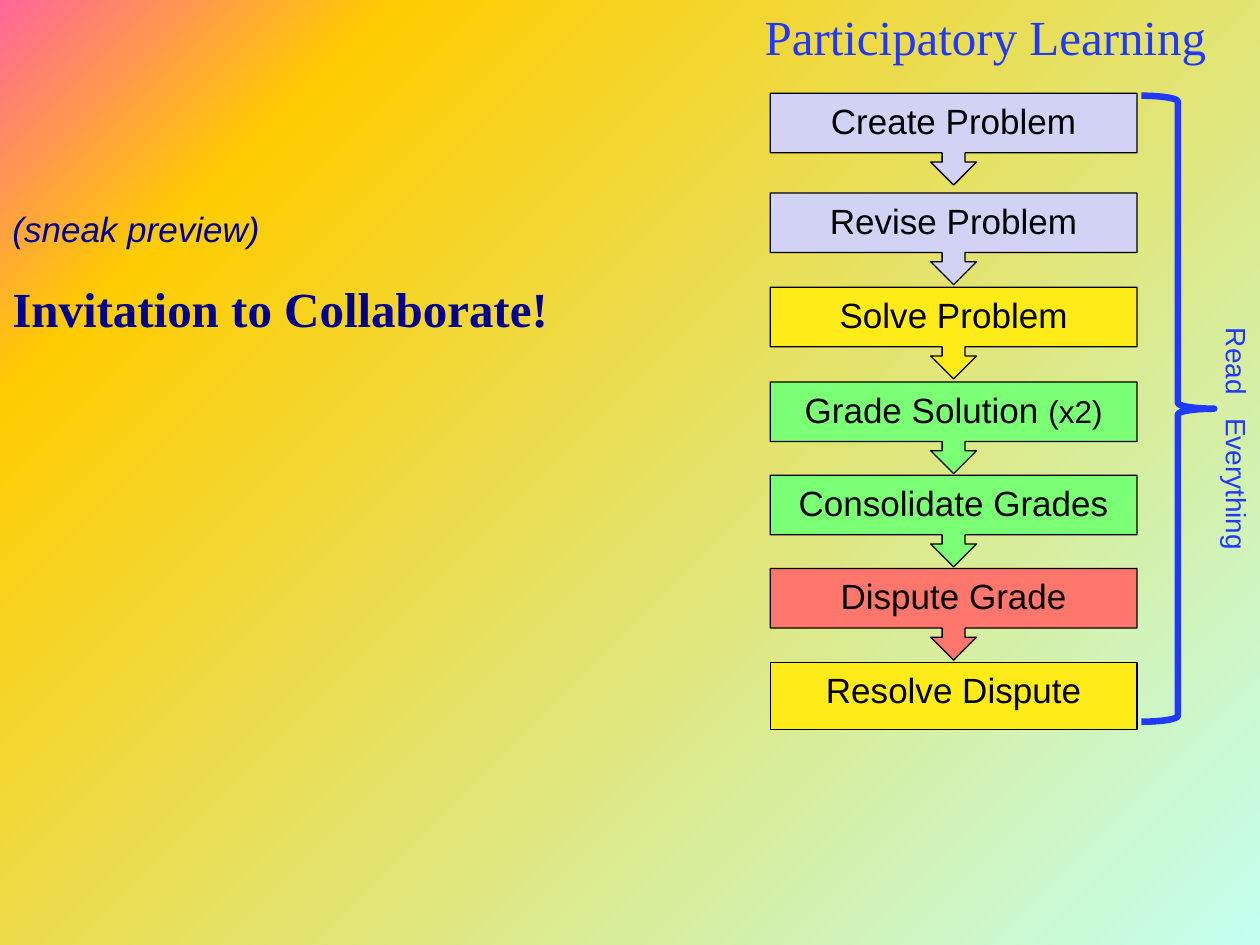
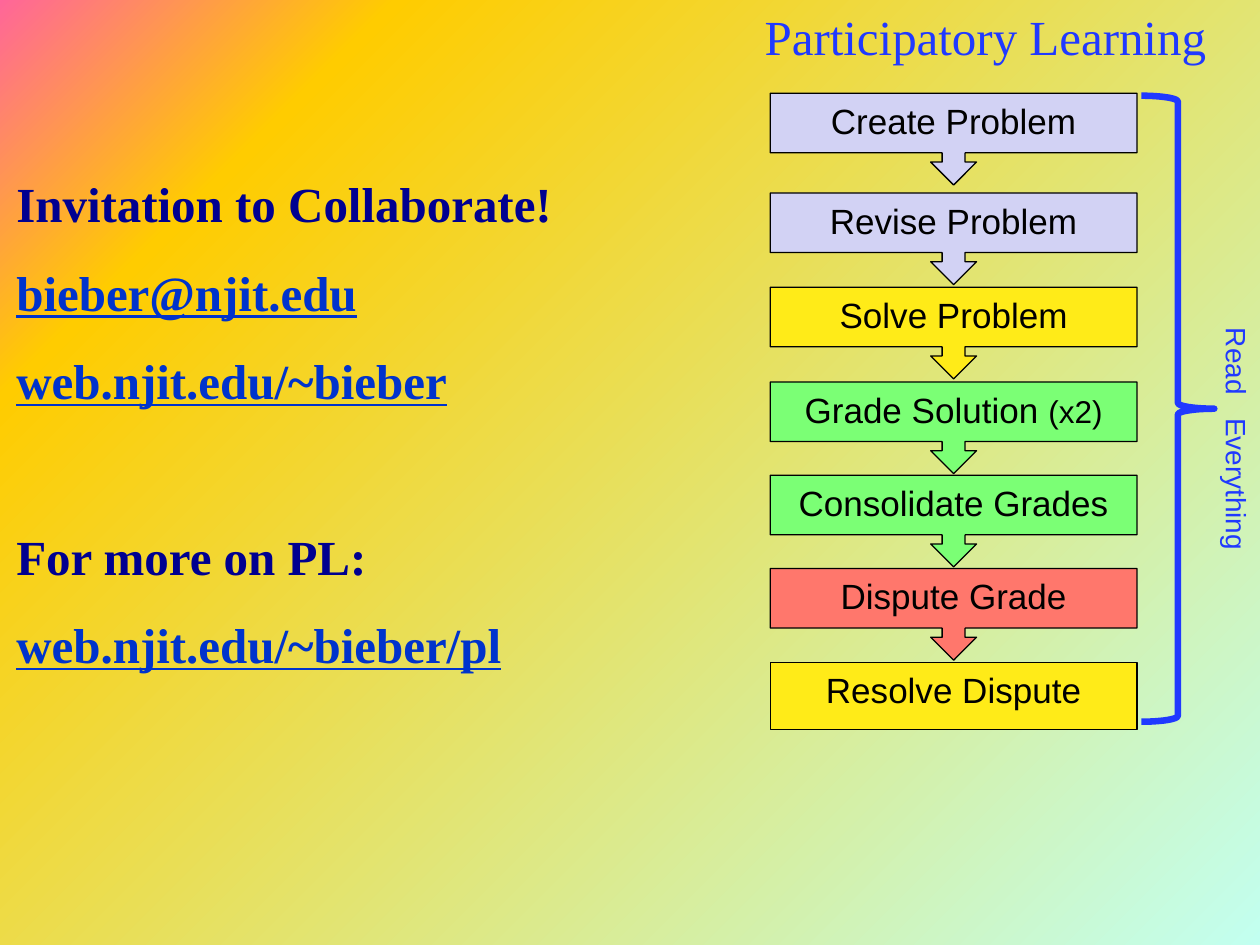
import pptx
import pptx.dml.color
import pptx.enum.shapes
import pptx.enum.text
import pptx.oxml
import pptx.oxml.ns
import pptx.util
from pptx.util import Cm, Pt

RGBColor = pptx.dml.color.RGBColor
MSO_SHAPE = pptx.enum.shapes.MSO_SHAPE
PP_ALIGN = pptx.enum.text.PP_ALIGN
qn = pptx.oxml.ns.qn

BLACK = RGBColor(0x00, 0x00, 0x00)
LAVENDER = RGBColor(0xD2, 0xD2, 0xF4)
YELLOW = RGBColor(0xFF, 0xEB, 0x18)
GREEN = RGBColor(0x7B, 0xFF, 0x75)
RED = RGBColor(0xFF, 0x77, 0x6C)
BLUE = RGBColor(0x20, 0x39, 0xFF)
NAVY = RGBColor(0x00, 0x00, 0x90)
LINK_BLUE = RGBColor(0x00, 0x33, 0xCC)

SANS = "Arial"
SERIF = "Times New Roman"

# Percent position and colour, from the bottom right corner outwards
BACKGROUND_STOPS = [(0, "FF9900"), (0, "C2FFF0"), (82, "FFCC00"), (100, "FF6699")]

# Step label, optional smaller suffix, top in cm, fill
STEPS = [
    ("Create Problem", "", 1.88, LAVENDER),
    ("Revise Problem", "", 3.89, LAVENDER),
    ("Solve Problem", "", 5.79, YELLOW),
    ("Grade Solution ", "(x2)", 7.7, GREEN),
    ("Consolidate Grades", "", 9.58, GREEN),
    ("Dispute Grade", "", 11.46, RED),
    ("Resolve Dispute", "", 13.36, YELLOW),
]


def set_background(master):
    """Give every slide the gradient that spreads from the bottom right corner."""
    master.background.fill.solid()
    solid_fill = master.element.find(".//" + qn("p:bgPr")).find(qn("a:solidFill"))
    stops = "".join(
        f'<a:gs pos="{percent * 1000}"><a:srgbClr val="{color}"/></a:gs>'
        for percent, color in BACKGROUND_STOPS
    )
    gradient = pptx.oxml.parse_xml(
        f'<a:gradFill {pptx.oxml.ns.nsdecls("a")} rotWithShape="0">'
        f"<a:gsLst>{stops}</a:gsLst>"
        '<a:path path="circle"><a:fillToRect l="100000" t="100000"/></a:path>'
        "</a:gradFill>"
    )
    solid_fill.getparent().replace(solid_fill, gradient)


def style_font(font, name, size, color, bold=False, italic=False, underline=False):
    font.name = name
    font.size = Pt(size)
    font.color.rgb = color
    font.bold = bold
    font.italic = italic
    font.underline = underline


def add_text_box(slide, left, top, width, height):
    frame = slide.shapes.add_textbox(Cm(left), Cm(top), Cm(width), Cm(height)).text_frame
    frame.word_wrap = True
    frame.auto_size = pptx.enum.text.MSO_AUTO_SIZE.SHAPE_TO_FIT_TEXT
    return frame


def add_step(slide, label, suffix, top, fill, is_last):
    """Draw a step box; all but the last one point down to the next."""
    kind = MSO_SHAPE.RECTANGLE if is_last else MSO_SHAPE.DOWN_ARROW_CALLOUT
    height = 1.35 if is_last else 1.85
    shape = slide.shapes.add_shape(kind, Cm(15.53), Cm(top), Cm(7.39), Cm(height))
    shape.shadow.inherit = False
    shape.fill.solid()
    shape.fill.fore_color.rgb = fill
    shape.line.color.rgb = BLACK
    shape.line.width = Pt(0.75)
    shape.text_frame.vertical_anchor = pptx.enum.text.MSO_ANCHOR.TOP
    paragraph = shape.text_frame.paragraphs[0]
    paragraph.alignment = PP_ALIGN.CENTER
    style_font(paragraph.add_run().font, SANS, 20, BLACK)
    paragraph.runs[0].text = label
    if suffix:
        run = paragraph.add_run()
        run.text = suffix
        style_font(run.font, SANS, 18, BLACK)


def add_brace(slide):
    brace = slide.shapes.add_shape(
        MSO_SHAPE.RIGHT_BRACE, Cm(23.01), Cm(1.93), Cm(1.47), Cm(12.62)
    )
    brace.shadow.inherit = False
    brace.fill.background()
    brace.line.color.rgb = BLUE
    brace.line.width = Pt(3.75)
    brace.adjustments[0] = 0.08
    brace.adjustments[1] = 0.5


def add_brace_label(slide):
    frame = add_text_box(slide, 24.21, 6.35, 1.19, 5)
    frame._txBody.bodyPr.set("vert", "vert")
    paragraph = frame.paragraphs[0]
    paragraph.alignment = PP_ALIGN.CENTER
    for text in ("Read", " ", "Everything"):
        run = paragraph.add_run()
        run.text = text
        style_font(run.font, SANS, 16, BLUE)
    # Widen the gap between the two words
    paragraph.runs[1].font._element.set("spc", "890")


def add_title(slide):
    paragraph = add_text_box(slide, 14.33, 0, 11.07, 1.45).paragraphs[0]
    paragraph.text = "Participatory Learning"
    paragraph.alignment = PP_ALIGN.CENTER
    style_font(paragraph.font, SERIF, 28, BLUE)


def add_process(slide):
    """Draw the part that both slides share."""
    for number, step in enumerate(STEPS, start=1):
        add_step(slide, *step, is_last=number == len(STEPS))
    add_brace(slide)
    add_brace_label(slide)
    add_title(slide)


def add_message(slide, left, top, height, lines):
    """Write lines given as (text, space before in points, font settings)."""
    frame = add_text_box(slide, left, top, 15.44, height)
    for index, (text, space_before, settings) in enumerate(lines):
        paragraph = frame.add_paragraph() if index else frame.paragraphs[0]
        paragraph.text = text
        paragraph.line_spacing = 1.5
        if space_before:
            paragraph.space_before = Pt(space_before)
        style_font(paragraph.font, **settings)


def main():
    presentation = pptx.Presentation()
    presentation.slide_width = Cm(25.4)
    presentation.slide_height = Cm(19.05)
    set_background(presentation.slide_master)
    blank = presentation.slide_layouts[6]

    preview = dict(name=SANS, size=20, color=NAVY, italic=True)
    heading = dict(name=SERIF, size=28, color=NAVY, bold=True)
    address = dict(heading, color=LINK_BLUE, underline=True)

    # Slide 1: sneak preview
    slide = presentation.slides.add_slide(blank)
    add_process(slide)
    add_message(slide, 0, 3.63, 8.71, [
        ("(sneak preview)", 0, preview),
        ("Invitation to Collaborate!", 0, heading),
    ])

    # Slide 2: contact addresses
    slide = presentation.slides.add_slide(blank)
    add_process(slide)
    add_message(slide, 0.08, 2.79, 12.83, [
        ("Invitation to Collaborate!", 0, heading),
        ("bieber@njit.edu", 0, address),
        ("web.njit.edu/~bieber", 0, address),
        ("For more on PL:", 50, heading),
        ("web.njit.edu/~bieber/pl", 0, address),
    ])

    presentation.save("out.pptx")


if __name__ == "__main__":
    main()
